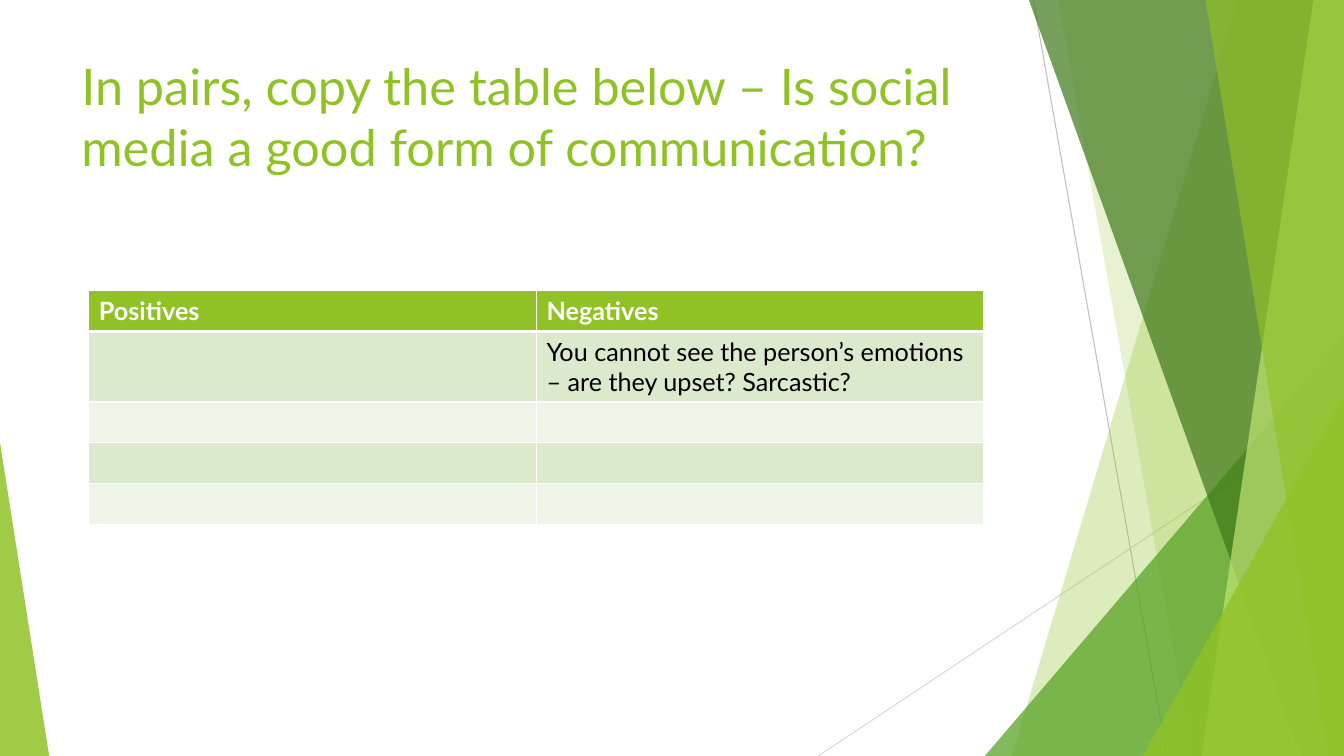
from lxml import etree
from pptx import Presentation
from pptx.dml.color import RGBColor
from pptx.enum.shapes import MSO_CONNECTOR, MSO_SHAPE
from pptx.enum.text import MSO_ANCHOR
from pptx.oxml.ns import qn
from pptx.util import Cm, Pt

STRAIGHT = MSO_CONNECTOR.STRAIGHT
TRIANGLE = MSO_SHAPE.ISOSCELES_TRIANGLE
TOP = MSO_ANCHOR.TOP

FONT = "Lato"
PAGE_WIDTH, PAGE_HEIGHT = 33.87, 19.05
LIME, WHITE, BLACK = "90C226", "FFFFFF", "000000"
BAND_FILLS = ["EEF4E8", "DBE9CD"]
ROWS = [
    ("Positives", "Negatives"),
    ("", "You cannot see the person’s emotions – are they upset? Sarcastic?"),
    ("", ""),
    ("", ""),
    ("", ""),
]


def colour(hex_code):
    return RGBColor.from_string(hex_code)


def paint(shape, hex_code, opacity):
    """Fill a shape with a see-through colour, without line or shadow."""
    shape.shadow.inherit = False
    shape.line.fill.background()
    shape.fill.solid()
    shape.fill.fore_color.rgb = colour(hex_code)
    tint = shape.fill._xPr.find(qn("a:solidFill"))[0]
    etree.SubElement(tint, qn("a:alpha"), val=str(opacity * 1000))


def add_thin_line(page, start, end, hex_code):
    line = page.shapes.add_connector(STRAIGHT, *[Cm(n) for n in start + end])
    line.line.color.rgb = colour(hex_code)
    line.line.width = Pt(0.75)
    etree.SubElement(line._element.spPr, qn("a:effectLst"))


def add_panel(page, top_left, bottom_left, hex_code, opacity):
    """Draw a full-height panel that ends at the right edge of the page."""
    builder = page.shapes.build_freeform(Cm(top_left), 0)
    corners = [(PAGE_WIDTH, 0), (PAGE_WIDTH, PAGE_HEIGHT), (bottom_left, PAGE_HEIGHT)]
    builder.add_line_segments([(Cm(x), Cm(y)) for x, y in corners])
    paint(builder.convert_to_shape(), hex_code, opacity)


def add_corner(page, left, top, width, peak, hex_code, opacity):
    """Draw a triangle that stands on the bottom edge of the page."""
    box = page.shapes.add_shape(
        TRIANGLE, Cm(left), Cm(top), Cm(width), Cm(PAGE_HEIGHT - top))
    box.adjustments[0] = peak
    paint(box, hex_code, opacity)


def write(frame, text, size, hex_code, bold=False):
    span = frame.paragraphs[0].add_run()
    span.text = text
    span.font.name = FONT
    span.font.size = Pt(size)
    span.font.bold = bold
    span.font.color.rgb = colour(hex_code)


def add_title(page, text):
    box = page.shapes.add_textbox(Cm(1.8), Cm(1.27), Cm(26.14), Cm(6.05))
    frame = box.text_frame
    frame.word_wrap = True
    frame.vertical_anchor = TOP
    frame.margin_right = Cm(1.5)
    write(frame, text, 36, LIME)


def add_borders(cell, bottom):
    properties = cell._tc.get_or_add_tcPr()
    for side, points in {"L": 1, "R": 1, "T": 1, "B": bottom}.items():
        edge = etree.SubElement(properties, qn(f"a:ln{side}"), w=str(Pt(points)))
        fill = etree.SubElement(edge, qn("a:solidFill"))
        etree.SubElement(fill, qn("a:srgbClr"), val=WHITE)


def add_opinion_table(page):
    row_height = 1.03
    table = page.shapes.add_table(
        len(ROWS), 2, Cm(2.24), Cm(7.32), Cm(22.56), Cm(row_height * len(ROWS))).table
    for row_number, texts in enumerate(ROWS):
        header = row_number == 0
        for column_number, text in enumerate(texts):
            cell = table.cell(row_number, column_number)
            add_borders(cell, bottom=3 if header else 1)
            cell.fill.solid()
            cell.fill.fore_color.rgb = colour(LIME if header else BAND_FILLS[row_number % 2])
            if text:
                write(cell.text_frame, text, 18, WHITE if header else BLACK, bold=header)


def main():
    deck = Presentation()
    deck.slide_width, deck.slide_height = Cm(PAGE_WIDTH), Cm(PAGE_HEIGHT)
    page = deck.slides.add_slide(deck.slide_layouts[6])

    # Faceted decoration, from back to front
    add_thin_line(page, (26.04, 0), (29.41, PAGE_HEIGHT), "BFBFBF")
    add_thin_line(page, (PAGE_WIDTH, 10.24), (20.62, PAGE_HEIGHT), "D9D9D9")
    add_panel(page, 31.19, 25.5, LIME, 30)
    add_panel(page, 26.67, 30.05, LIME, 20)
    add_corner(page, 24.82, 8.46, 9.05, 1, "54A021", 72)
    add_panel(page, 25.93, 32.79, "3F7819", 70)
    add_panel(page, 33.1, 30.28, "C0E474", 70)
    add_panel(page, 30.38, 33.48, LIME, 65)
    add_corner(page, 28.8, 9.98, 5.07, 1, LIME, 80)
    add_corner(page, 0, 11.15, 1.24, 0, LIME, 85)

    # Question and table
    add_title(page, "In pairs, copy the table below – Is social media "
                    "a good form of communication?")
    add_opinion_table(page)

    deck.save("out.pptx")


if __name__ == "__main__":
    main()
